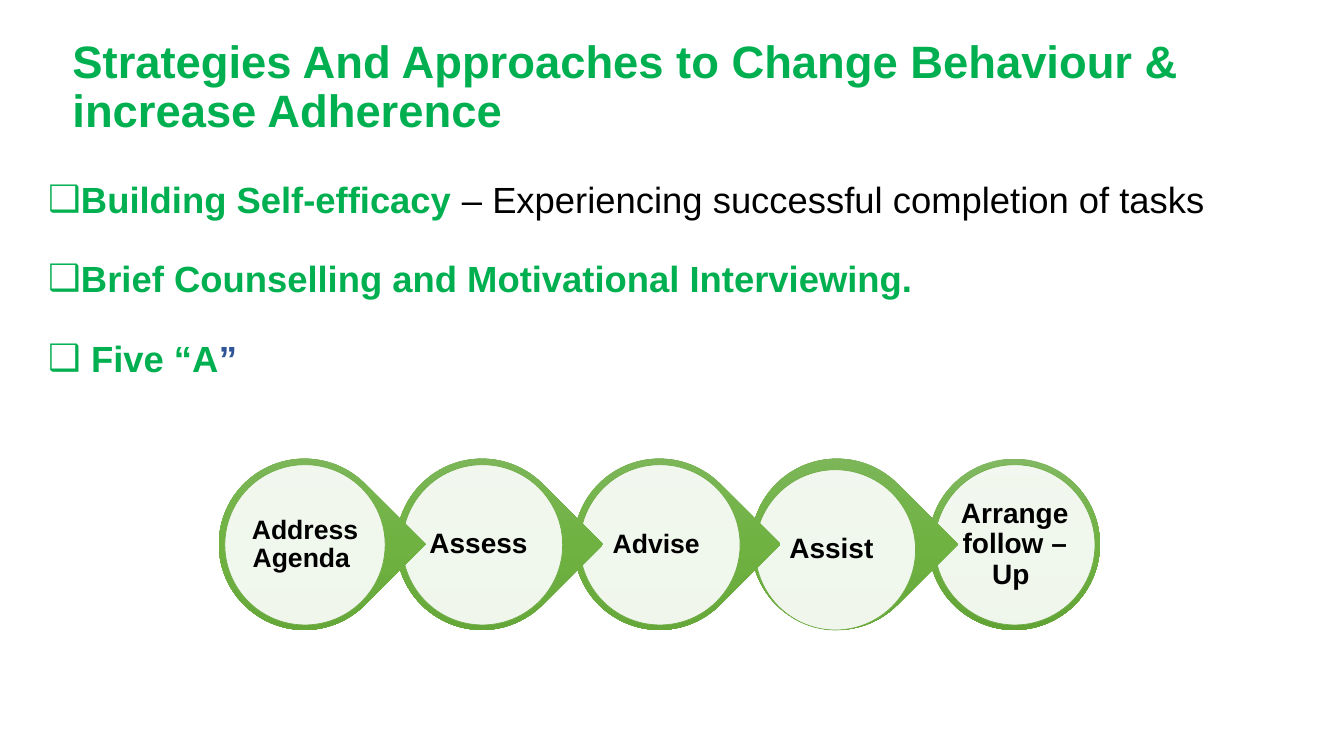
import pptx
import pptx.util
import pptx.dml.color
import pptx.enum.shapes
import pptx.enum.text
import pptx.oxml
import pptx.oxml.ns

Inches = pptx.util.Inches
Pt = pptx.util.Pt
RGBColor = pptx.dml.color.RGBColor
MSO_SHAPE = pptx.enum.shapes.MSO_SHAPE
MSO_ANCHOR = pptx.enum.text.MSO_ANCHOR
PP_ALIGN = pptx.enum.text.PP_ALIGN
qn = pptx.oxml.ns.qn

GREEN = RGBColor(0x00, 0xB0, 0x50)
BLACK = RGBColor(0x00, 0x00, 0x00)
BLUE = RGBColor(0x2F, 0x55, 0x97)
WHITE = RGBColor(0xFF, 0xFF, 0xFF)
RIM = RGBColor(0x70, 0xAD, 0x47)
GRADIENT = [
    (0, RGBColor(0x81, 0xB8, 0x61)),
    (50, RGBColor(0x6F, 0xB2, 0x42)),
    (100, RGBColor(0x62, 0xA3, 0x36)),
]

TITLE = "Strategies And Approaches to Change Behaviour & increase Adherence"
STRATEGIES = [
    [("Building Self-efficacy ", GREEN, True),
     ("– Experiencing successful completion of tasks", BLACK, False)],
    [("Brief Counselling and Motivational Interviewing.", GREEN, True)],
    [(" Five “A", GREEN, True), ("”", BLUE, True)],
]
STEPS = [
    ("Address Agenda ", 19, (0.06, 0.06)),
    ("Assess ", 20, (0.06, 0.06)),
    ("Advise ", 19, (0.06, 0.06)),
    ("Assist ", 20, (0.04, 0.11)),
    ("Arrange follow –Up ", 20, (0.06, 0.06)),
]

STEP_LEFT, STEP_TOP, STEP_PITCH = 2.17, 4.55, 1.76
DROP, DISC, LABEL = 1.7, 1.59, 1.14


def add_text(slide, box, paragraphs, size, anchor=MSO_ANCHOR.TOP, align=PP_ALIGN.LEFT,
             spacing=0.9, before=0, inset=(0.1, 0.05), bullet=None):
    sp = slide.shapes.add_textbox(*[Inches(v) for v in box])
    tf = sp.text_frame
    tf.word_wrap = True
    tf.vertical_anchor = anchor
    tf.margin_left = tf.margin_right = Inches(inset[0])
    tf.margin_top = tf.margin_bottom = Inches(inset[1])
    for i, runs in enumerate(paragraphs):
        p = tf.add_paragraph() if i else tf.paragraphs[0]
        p.alignment = align
        p.line_spacing = spacing
        p.space_before = Pt(before)
        for text, color, bold in runs:
            r = p.add_run()
            r.text = text
            r.font.name = "Arial"
            r.font.size = Pt(size)
            r.font.bold = bold
            r.font.color.rgb = color
        if bullet:
            pPr = p._p.get_or_add_pPr()
            pPr.set("marL", str(Inches(0.25)))
            pPr.set("indent", str(-Inches(0.25)))
            pptx.oxml.ns.qn("a:buFont")
            font = pPr.makeelement(qn("a:buFont"), {"typeface": "Arial"})
            char = pPr.makeelement(qn("a:buChar"), {"char": bullet})
            pPr.extend([font, char])
    return sp


def add_round(slide, kind, left, top, size):
    sp = slide.shapes.add_shape(kind, Inches(left), Inches(top), Inches(size), Inches(size))
    sp.shadow.inherit = False
    return sp


def fill_gradient(sp):
    sp.fill.gradient()
    sp.fill.gradient_angle = 270
    grad = sp._element.spPr.find(qn("a:gradFill"))
    grad.set("rotWithShape", "0")
    stops = grad.find(qn("a:gsLst"))
    for stop in list(stops):
        stops.remove(stop)
    for pos, color in GRADIENT:
        stop = stops.makeelement(qn("a:gs"), {"pos": str(pos * 1000)})
        stop.append(stop.makeelement(qn("a:srgbClr"), {"val": str(color)}))
        stops.append(stop)


def add_step(slide, i, label, size, offset):
    left = STEP_LEFT + i * STEP_PITCH
    last = i == len(STEPS) - 1
    drop = add_round(slide, MSO_SHAPE.OVAL if last else MSO_SHAPE.TEAR,
                     left, STEP_TOP, DROP)
    drop.rotation = 0 if last else 45
    drop.line.fill.background()
    fill_gradient(drop)

    x, y = left + offset[0], STEP_TOP + offset[1]
    disc = add_round(slide, MSO_SHAPE.OVAL, x, y, DISC)
    disc.fill.solid()
    disc.fill.fore_color.rgb = WHITE
    color = disc._element.spPr.find(qn("a:solidFill"))[0]
    color.append(color.makeelement(qn("a:alpha"), {"val": "90000"}))
    disc.line.color.rgb = RIM
    disc.line.width = Pt(0.5)

    pad = (DISC - LABEL) / 2
    add_text(slide, (x + pad, y + pad, LABEL, LABEL), [[(label, BLACK, True)]], size,
             anchor=MSO_ANCHOR.MIDDLE, align=PP_ALIGN.CENTER, inset=(0.03, 0.03))


def main():
    prs = pptx.Presentation()
    prs.slide_width = Inches(13.33)
    prs.slide_height = Inches(7.5)
    slide = prs.slides.add_slide(prs.slide_layouts[6])
    add_text(slide, (0.62, 0.4, 11.79, 0.96), [[(TITLE, GREEN, True)]], 32.4,
             anchor=MSO_ANCHOR.MIDDLE)
    add_text(slide, (0.38, 1.49, 12.22, 5.62), STRATEGIES, 26,
             spacing=1.5, before=10, bullet="❑")
    for i, step in reversed(list(enumerate(STEPS))):
        add_step(slide, i, *step)
    prs.save("out.pptx")


if __name__ == "__main__":
    main()
